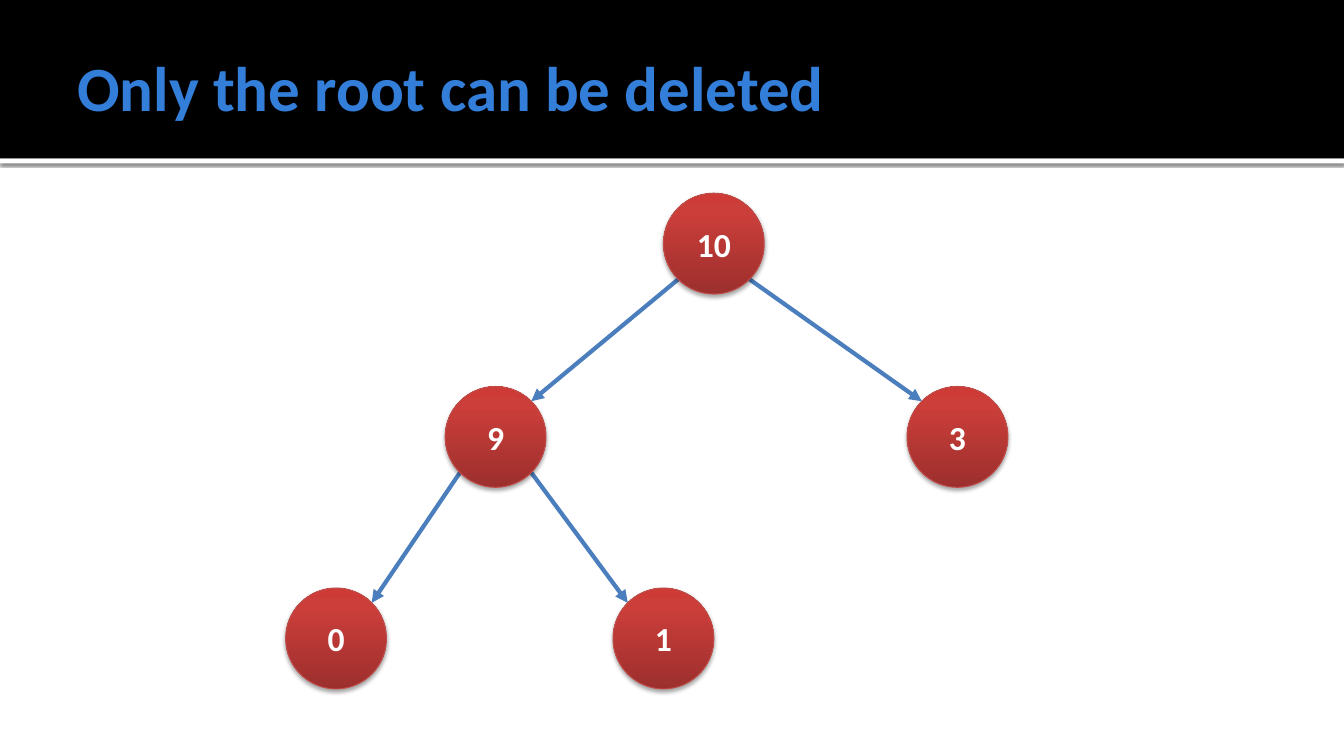
from math import sqrt

from lxml.etree import SubElement
from pptx import Presentation
from pptx.dml.color import RGBColor
from pptx.enum.shapes import MSO_CONNECTOR, MSO_SHAPE
from pptx.enum.text import MSO_ANCHOR, PP_ALIGN
from pptx.oxml import parse_xml
from pptx.oxml.ns import nsdecls, qn
from pptx.util import Cm, Pt

# Content
TITLE = "Only the root can be deleted"
NODES = {  # value: (left, top) in cm
    "10": (16.72, 4.87),
    "9": (11.22, 9.74),
    "3": (22.86, 9.74),
    "0": (7.2, 14.82),
    "1": (15.45, 14.82),
}
EDGES = [("10", "9"), ("9", "0"), ("9", "1"), ("10", "3")]

# Style
FONT = "Calibri"
BLACK = RGBColor(0x00, 0x00, 0x00)
WHITE = RGBColor(0xFF, 0xFF, 0xFF)
TITLE_BLUE = RGBColor(0x33, 0x7E, 0xD9)
ARROW_BLUE = RGBColor(0x4B, 0x7E, 0xBC)
NODE_EDGE = RGBColor(0xBF, 0x4C, 0x48)
NODE_STOPS = [
    (0, RGBColor(0x9C, 0x2F, 0x2D)),
    (80, RGBColor(0xCB, 0x3E, 0x3A)),
    (100, RGBColor(0xCE, 0x3B, 0x37)),
]
SLIDE_W, SLIDE_H = 33.87, 19.05
BAND_H, STRIP_H = 3.99, 0.13
DIAMETER = 2.54
INSET = DIAMETER / 2 * (1 - sqrt(0.5))  # from the box corner to the circle


def add_shadow(sp, blur, dist, alpha):
    sp._element.spPr.append(parse_xml(
        f'<a:effectLst {nsdecls("a")}><a:outerShdw blurRad="{Pt(blur)}" '
        f'dist="{Pt(dist)}" dir="5400000" rotWithShape="0">'
        f'<a:srgbClr val="{BLACK}"><a:alpha val="{alpha * 1000}"/></a:srgbClr>'
        '</a:outerShdw></a:effectLst>'))


def add_band(s, top, height, color):
    sp = s.shapes.add_shape(MSO_SHAPE.RECTANGLE, 0, Cm(top), Cm(SLIDE_W), Cm(height))
    sp.fill.solid()
    sp.fill.fore_color.rgb = color
    sp.line.fill.background()
    return sp


def add_text(tf, text, size, color, align):
    tf.word_wrap = True
    tf.vertical_anchor = MSO_ANCHOR.MIDDLE
    p = tf.paragraphs[0]
    p.text = text
    p.alignment = align
    p.font.name = FONT
    p.font.size = Pt(size)
    p.font.bold = True
    p.font.color.rgb = color


def add_edge(s, parent, child):
    (px, py), (cx, cy) = NODES[parent], NODES[child]
    near, far = INSET, DIAMETER - INSET
    start_x, end_x = (near, far) if cx < px else (far, near)
    line = s.shapes.add_connector(
        MSO_CONNECTOR.STRAIGHT,
        Cm(px + start_x), Cm(py + far), Cm(cx + end_x), Cm(cy + near))
    line.line.color.rgb = ARROW_BLUE
    line.line.width = Pt(3)
    SubElement(line.line._get_or_add_ln(), qn("a:tailEnd"), type="triangle")
    SubElement(line._element.spPr, qn("a:effectLst"))


def add_node(s, value):
    left, top = NODES[value]
    sp = s.shapes.add_shape(
        MSO_SHAPE.OVAL, Cm(left), Cm(top), Cm(DIAMETER), Cm(DIAMETER))
    stops = "".join(f'<a:gs pos="{pos * 1000}"><a:srgbClr val="{color}"/></a:gs>'
                    for pos, color in NODE_STOPS)
    sp._element.spPr.insert(2, parse_xml(
        f'<a:gradFill {nsdecls("a")} rotWithShape="1"><a:gsLst>{stops}</a:gsLst>'
        '<a:lin ang="16200000" scaled="0"/></a:gradFill>'))
    sp.line.color.rgb = NODE_EDGE
    sp.line.width = Pt(0.75)
    add_shadow(sp, 3.1, 1.8, 35)
    add_text(sp.text_frame, value, 24, WHITE, PP_ALIGN.CENTER)


def main():
    prs = Presentation()
    prs.slide_width, prs.slide_height = Cm(SLIDE_W), Cm(SLIDE_H)
    s = prs.slides.add_slide(prs.slide_layouts[6])

    # Header
    add_shadow(add_band(s, BAND_H, STRIP_H, WHITE), 2.5, 0.8, 60)
    add_band(s, 0, BAND_H, BLACK).shadow.inherit = False
    tf = s.shapes.add_textbox(Cm(1.7), Cm(0.43), Cm(30.48), Cm(3.48)).text_frame
    tf.margin_left = Cm(0.25)
    tf.margin_top = tf.margin_right = tf.margin_bottom = Cm(0.13)
    add_text(tf, TITLE, 45, TITLE_BLUE, PP_ALIGN.LEFT)

    # Tree: arrows behind nodes
    for parent, child in EDGES:
        add_edge(s, parent, child)
    for value in NODES:
        add_node(s, value)

    prs.save("out.pptx")


if __name__ == "__main__":
    main()
